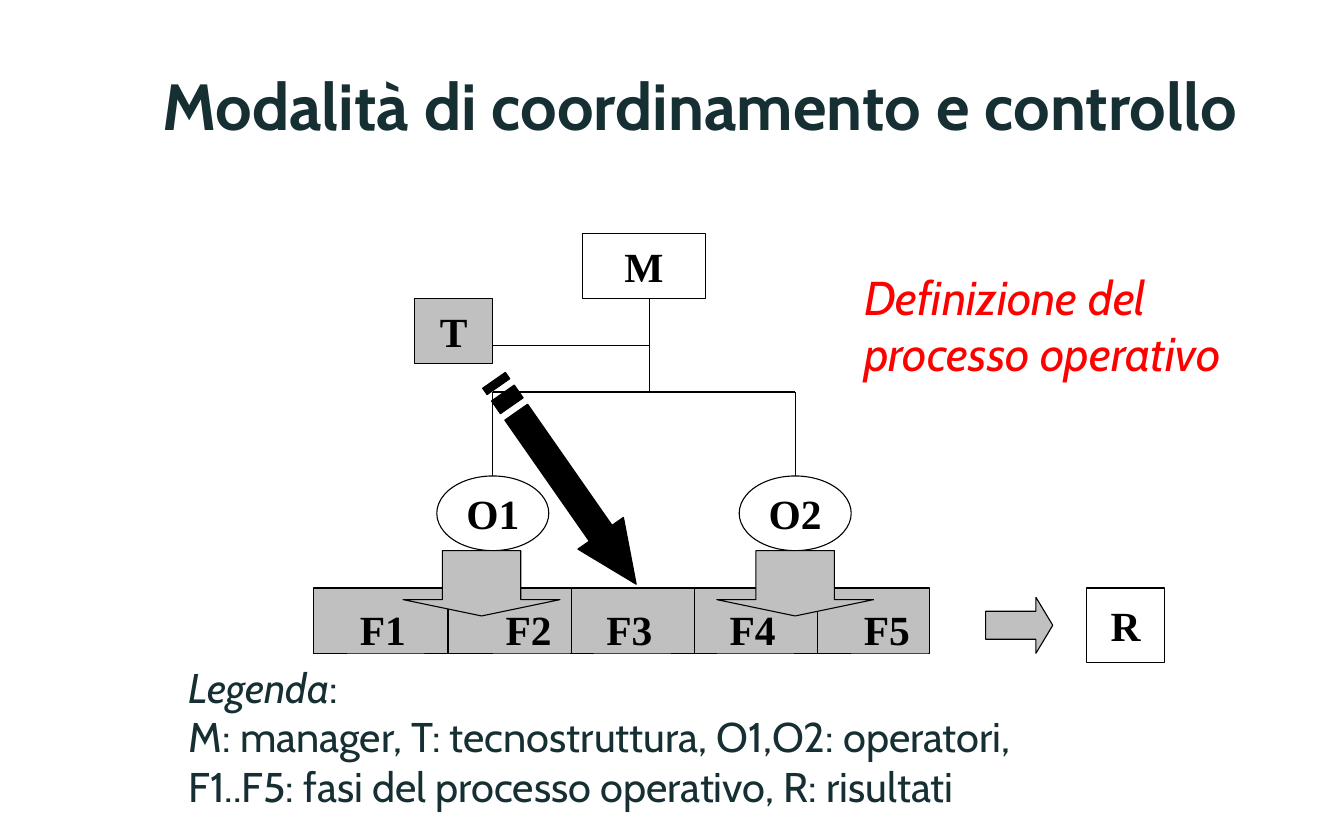
from pptx import Presentation
from pptx.dml.color import RGBColor
from pptx.enum.shapes import MSO_CONNECTOR, MSO_SHAPE
from pptx.enum.text import MSO_ANCHOR, MSO_AUTO_SIZE, PP_ALIGN
from pptx.oxml.ns import qn
from pptx.util import Inches, Pt
from lxml import etree

INK = RGBColor(0x16, 0x2F, 0x33)
RED = RGBColor(0xFF, 0x00, 0x00)
BLACK = RGBColor(0x00, 0x00, 0x00)
WHITE = RGBColor(0xFF, 0xFF, 0xFF)
GREY = RGBColor(0xC0, 0xC0, 0xC0)

RECT = MSO_SHAPE.RECTANGLE
OVAL = MSO_SHAPE.OVAL
RIGHT = MSO_SHAPE.RIGHT_ARROW
DOWN = MSO_SHAPE.DOWN_ARROW
STRAIGHT = MSO_CONNECTOR.STRAIGHT
LEFT, CENTER = PP_ALIGN.LEFT, PP_ALIGN.CENTER
TOP, MIDDLE = MSO_ANCHOR.TOP, MSO_ANCHOR.MIDDLE
FIXED = MSO_AUTO_SIZE.NONE

WIDE = Inches(12.6)
HIGH = WIDE * 10 // 16
COL, ROW = WIDE / 120, HIGH / 90
SERIF, SANS = "Times New Roman", "Cabin"


def area(box, x, y, w, h):
    left, top = box
    return [round(n) for n in ((left + x) * COL, (top + y) * ROW, w * COL, h * ROW)]


def style(run, font, size, color, bold=False, italic=False):
    run.font.name = font
    run.font.size = Pt(size)
    run.font.color.rgb = color
    run.font.bold = bold
    run.font.italic = italic


def frame(shape, align, anchor, wrap):
    text = shape.text_frame
    text.auto_size = FIXED
    text.word_wrap = wrap
    text.vertical_anchor = anchor
    text.margin_left = text.margin_right = Inches(0.12)
    text.margin_top = text.margin_bottom = Inches(0.06)
    for par in text.paragraphs:
        par.alignment = align
    return text


def paint(shape, fill, edge=True):
    shape.shadow.inherit = False
    shape.fill.solid()
    shape.fill.fore_color.rgb = fill
    if edge:
        shape.line.color.rgb = BLACK
        shape.line.width = Pt(0.75)
    else:
        shape.line.fill.background()


def node(slide, kind, place, fill, label="", align=CENTER, anchor=MIDDLE,
         edge=True, adjust=()):
    shape = slide.shapes.add_shape(kind, *place)
    paint(shape, fill, edge)
    for i, value in enumerate(adjust):
        shape.adjustments[i] = value
    if label:
        shape.text_frame.text = label
        text = frame(shape, align, anchor, False)
        style(text.paragraphs[0].runs[0], SERIF, 28, BLACK, bold=True)


def link(slide, box, x1, y1, x2, y2):
    left, top, w, h = area(box, x1, y1, x2 - x1, y2 - y1)
    line = slide.shapes.add_connector(STRAIGHT, left, top, left + w, top + h)
    line.line.color.rgb = BLACK
    line.line.width = Pt(0.75)
    etree.SubElement(line._element.spPr, qn("a:effectLst"))


def striped(slide, place):
    left, top, w, h = place
    pen = slide.shapes.build_freeform(24, 0, scale=(w / 32, h / 4))
    pen.add_line_segments(((24, 1), (5, 1), (5, 3), (24, 3), (24, 4), (32, 2)))
    for x1, x2 in ((2, 4), (0, 1)):
        pen.move_to(x2, 1)
        pen.add_line_segments(((x2, 3), (x1, 3), (x1, 1)))
    arrow = pen.convert_to_shape(left, top)
    paint(arrow, BLACK)
    arrow.rotation = 55.1


def title(slide, box):
    head = slide.shapes.title
    head.left, head.top, head.width, head.height = area(box, 0, 0, 113.4, 9.7)
    head.text_frame.text = "Modalità di coordinamento e controllo"
    text = frame(head, CENTER, TOP, False)
    style(text.paragraphs[0].runs[0], SANS, 44, INK, bold=True)


def chart(slide, box):
    for ends in ((16, 26, 16, 17), (43, 26, 43, 17), (16, 17, 43, 17),
                 (30, 17, 30, 7), (30, 12, 16, 12)):
        link(slide, box, *ends)
    for label, x in (("O1", 11), ("O2", 38)):
        node(slide, OVAL, area(box, x, 26, 10, 8), WHITE, label)
    node(slide, RECT, area(box, 24, 0, 11, 7), WHITE, "M")
    node(slide, RECT, area(box, 9, 7, 7, 7), GREY, "T")
    striped(slide, area(box, 11.35, 23.7, 22.2, 5.95))


def process(slide, box):
    node(slide, RECT, area(box, 0, 4, 55, 7), GREY)
    for x in range(12, 55, 11):
        link(slide, box, x, 4, x, 11)
    for i, x in enumerate((3, 16, 25, 36, 48), 1):
        node(slide, RECT, area(box, x, 5, 6.9, 6), GREY, f"F{i}",
             LEFT, TOP, edge=False)
    for x in (8, 36):
        node(slide, DOWN, area(box, x, 0, 14, 7), GREY, adjust=(0.5, 0.25))
    node(slide, RIGHT, area(box, 60, 5, 6, 6), GREY, adjust=(0.5, 0.3))
    node(slide, RECT, area(box, 69, 4, 7, 8), WHITE, "R")


def note(slide, box):
    shape = slide.shapes.add_textbox(*area(box, 0, 0, 38, 13.5))
    shape.text_frame.text = "Definizione del processo operativo"
    text = frame(shape, LEFT, TOP, True)
    style(text.paragraphs[0].runs[0], SANS, 32, RED, italic=True)


def legend(slide, box):
    shape = slide.shapes.add_textbox(*area(box, 0, 0, 83, 17.4))
    shape.text_frame.text = "\n".join((
        "Legenda",
        "M: manager, T: tecnostruttura, O1,O2: operatori,",
        "F1..F5: fasi del processo operativo, R: risultati"))
    text = frame(shape, LEFT, TOP, True)
    first = text.paragraphs[0]
    first.add_run().text = ":"
    for par in text.paragraphs:
        for run in par.runs:
            style(run, SANS, 28, INK)
    first.runs[0].font.italic = True


def main():
    deck = Presentation()
    deck.slide_width, deck.slide_height = WIDE, HIGH
    slide = deck.slides.add_slide(deck.slide_layouts[5])
    title(slide, (5.8, 6.3))
    chart(slide, (28, 25))
    process(slide, (28, 59))
    legend(slide, (15.7, 70.2))
    note(slide, (76, 28))
    deck.save("out.pptx")


if __name__ == "__main__":
    main()
